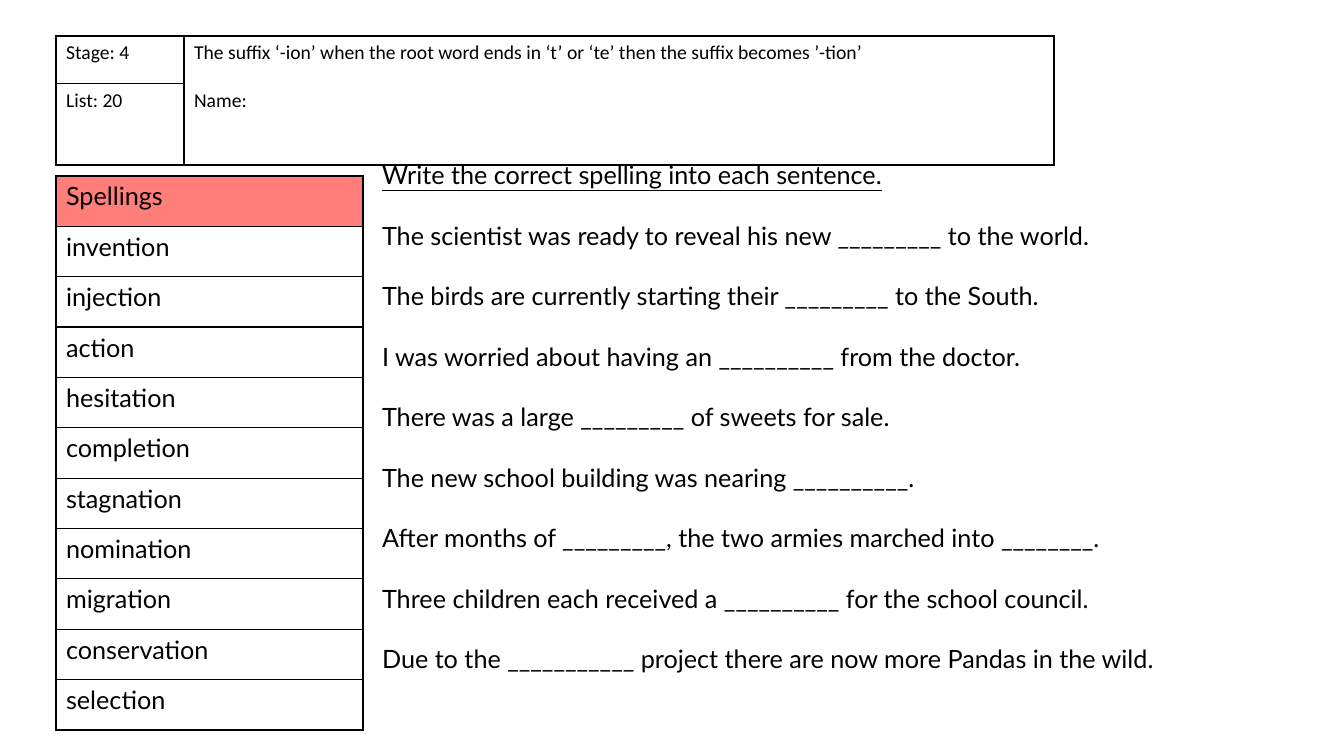
from lxml import etree
from pptx import Presentation
from pptx import util as u
from pptx.dml.color import RGBColor
from pptx.enum import text
from pptx.oxml import ns

PX_PER_INCH = 100.8
BLACK = RGBColor(0x00, 0x00, 0x00)
CORAL = RGBColor(0xFF, 0x7E, 0x79)
SPELLINGS = ["Spellings", "invention", "injection", "action", "hesitation", "completion",
             "stagnation", "nomination", "migration", "conservation", "selection"]
HEADING = "Write the correct spelling into each sentence."
SENTENCES = [
    "The scientist was ready to reveal his new _________ to the world.",
    "The birds are currently starting their _________ to the South.",
    "I was worried about having an __________ from the doctor.",
    "There was a large _________ of sweets for sale.",
    "The new school building was nearing __________.",
    "After months of _________, the two armies marched into ________.",
    "Three children each received a __________ for the school council.",
    "Due to the ___________ project there are now more Pandas in the wild.",
]
RULE = "The suffix ‘-ion’ when the root word ends in ‘t’ or ‘te’ then the suffix becomes ’-tion’"


def px(length):
    return u.Emu(round(length * 914400 / PX_PER_INCH))


def write(frame, lines, font_name, size, gap=0):
    frame.text = "\n".join(lines)
    for index, paragraph in enumerate(frame.paragraphs):
        paragraph.alignment = text.PP_ALIGN.LEFT
        paragraph.space_before = u.Pt(gap if index else 0)
        font = paragraph.font
        font.name = font_name
        font.size = u.Pt(size)
        font.color.rgb = BLACK


def add_borders(cell):
    properties = cell._tc.get_or_add_tcPr()
    for side in ("lnL", "lnR", "lnT", "lnB"):
        line = etree.SubElement(properties, ns.qn(f"a:{side}"), w=str(u.Pt(1)))
        fill = etree.SubElement(line, ns.qn("a:solidFill"))
        etree.SubElement(fill, ns.qn("a:srgbClr"), val=str(BLACK))


def add_plain_table(slide, rows, widths, left, top, height):
    frame = slide.shapes.add_table(rows, len(widths), px(left), px(top),
                                   px(sum(widths)), px(height))
    table = frame.table
    table.first_row = False
    table.horz_banding = False
    for column, width in zip(table.columns, widths):
        column.width = px(width)
    for cell in table.iter_cells():
        add_borders(cell)
        cell.fill.background()
    return table


def add_spellings(slide, left, top, width, height):
    table = add_plain_table(slide, len(SPELLINGS), [width], left, top, height)
    for cell, word in zip(table.iter_cells(), SPELLINGS):
        write(cell.text_frame, [word], "Lato", 18)
    header = table.cell(0, 0)
    header.fill.solid()
    header.fill.fore_color.rgb = CORAL


def add_stage_header(slide, left, top, width, height):
    label_width = 128
    table = add_plain_table(slide, 2, [label_width, width - label_width], left, top, height)
    table.cell(0, 1).merge(table.cell(1, 1))
    write(table.cell(0, 0).text_frame, ["Stage: 4"], "Calibri", 14)
    write(table.cell(1, 0).text_frame, ["List: 20"], "Calibri", 14)
    write(table.cell(0, 1).text_frame, [RULE, "Name:"], "Calibri", 14, gap=17)


def place(shape, left, top, width, height):
    shape.left, shape.top, shape.width, shape.height = map(px, (left, top, width, height))
    frame = shape.text_frame
    frame.word_wrap = True
    frame.auto_size = text.MSO_AUTO_SIZE.NONE
    frame.vertical_anchor = text.MSO_ANCHOR.TOP
    return frame


def add_exercise(slide, left, top, width, height):
    heading_height = 61
    title, body = slide.placeholders
    heading = place(title, left, top, width, heading_height)
    write(heading, [HEADING], "Lato", 18)
    heading.paragraphs[0].font.underline = True

    sentences = place(body, left, top + heading_height, width, height - heading_height)
    write(sentences, SENTENCES, "Lato", 18, gap=21.6)
    for paragraph in sentences.paragraphs:
        properties = paragraph._p.get_or_add_pPr()
        properties.set("marL", "0")
        properties.set("indent", "0")
        bullet = etree.Element(ns.qn("a:buNone"))
        properties.find(ns.qn("a:defRPr")).addprevious(bullet)


def main():
    presentation = Presentation()
    presentation.slide_width = px(1344)
    presentation.slide_height = px(756)
    slide = presentation.slides.add_slide(presentation.slide_layouts[1])
    add_spellings(slide, 56, 176, 307, 554)
    add_stage_header(slide, 56, 36, 998, 95)
    add_exercise(slide, 372, 154, 972, 591)
    presentation.save("out.pptx")


if __name__ == "__main__":
    main()
